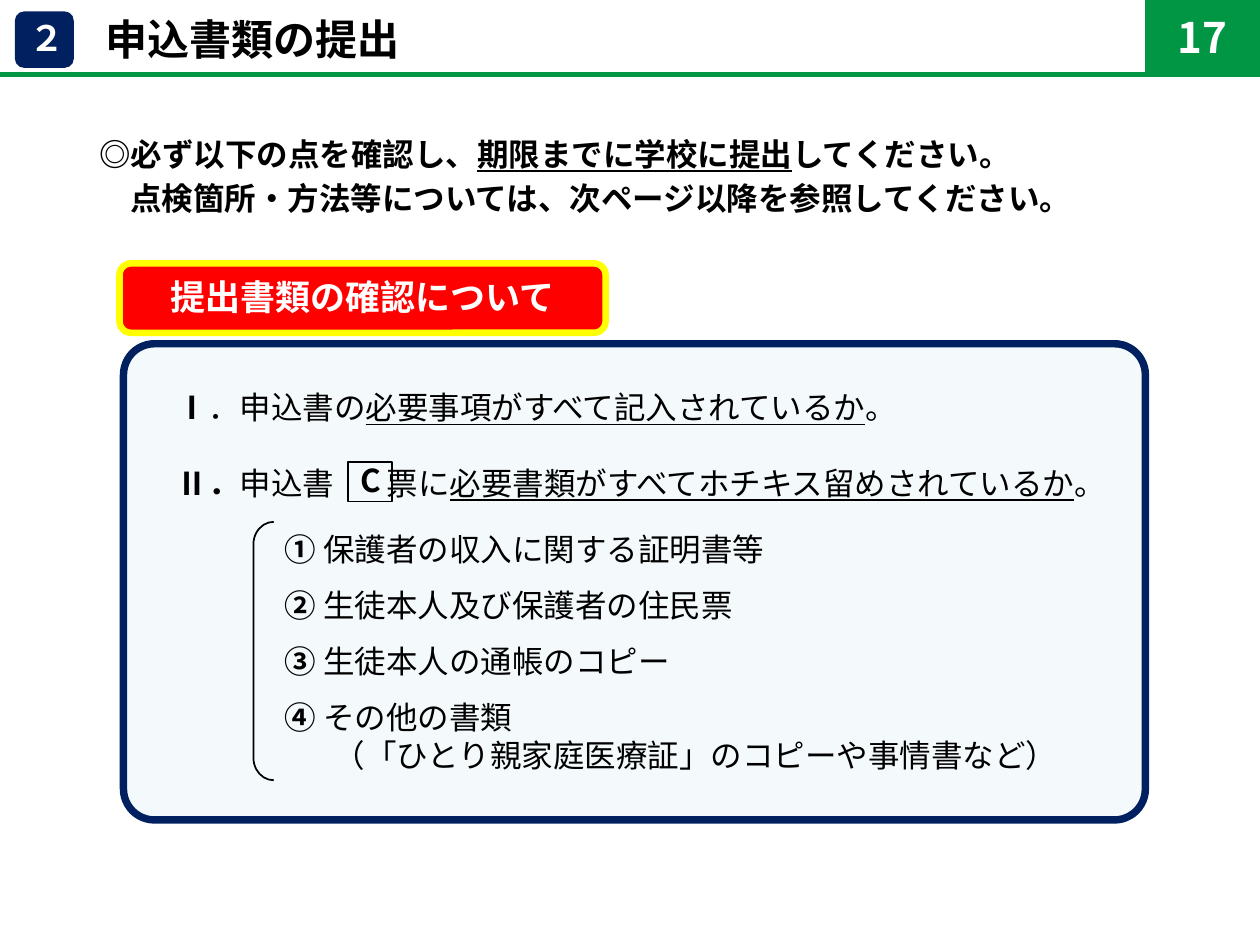
from dataclasses import dataclass
from typing import NamedTuple

from lxml.etree import SubElement
from pptx import Presentation
from pptx.dml.color import RGBColor
from pptx.enum.shapes import MSO_CONNECTOR, MSO_SHAPE
from pptx.enum.text import MSO_ANCHOR, PP_ALIGN
from pptx.oxml.ns import qn
from pptx.util import Cm, Pt


@dataclass(frozen=True)
class Theme:
    font: str = "Noto Sans CJK JP"
    black: str = "000000"
    white: str = "FFFFFF"
    navy: str = "002060"
    green: str = "009644"
    red: str = "FF0000"
    yellow: str = "FFFF00"
    pale: str = "DBEEF4"
    body: int = 18
    label: int = 20
    head: int = 24


class Box(NamedTuple):
    left: float
    top: float
    width: float
    height: float


class Span(NamedTuple):
    text: str
    bold: bool = False
    under: bool = False
    gap: int = 0


class Line(NamedTuple):
    spans: list[Span]
    indent: float
    before: float = 0


@dataclass(frozen=True)
class Block:
    kind: MSO_SHAPE
    box: Box
    fill: str = ""
    edge: str = ""
    weight: float = 1
    text: str = ""
    size: int = 18
    color: str = "FFFFFF"
    inset: float = 0.13
    foot: float = 0.13


THEME = Theme()


def style(run, size: int, color: str, bold: bool) -> None:
    font = run.font
    font.name, font.size, font.bold = THEME.font, Pt(size), bold
    font.color.rgb = RGBColor.from_string(color)
    SubElement(font._element, qn("a:ea")).set("typeface", THEME.font)


def set_frame(frame, top: float, foot: float, anchor: MSO_ANCHOR) -> None:
    frame.word_wrap = True
    frame.vertical_anchor = anchor
    frame.margin_left = frame.margin_right = Cm(0.25)
    frame.margin_top, frame.margin_bottom = Cm(top), Cm(foot)


def write_lines(frame, lines: list[Line]) -> None:
    for i, line in enumerate(lines):
        para = frame.add_paragraph() if i else frame.paragraphs[0]
        para.alignment = PP_ALIGN.LEFT
        para.space_before = Pt(line.before)
        props = para._p.get_or_add_pPr()
        props.set("marL", str(Cm(line.indent)))
        props.set("indent", "0")
        for span in line.spans:
            run = para.add_run()
            run.text = span.text
            style(run, THEME.body, THEME.black, span.bold)
            run.font.underline = span.under
            if span.gap:
                run.font._element.set("spc", str(span.gap * 100))


def draw_block(slide, block: Block):
    shape = slide.shapes.add_shape(block.kind, *map(Cm, block.box))
    shape.shadow.inherit = False
    if block.fill:
        shape.fill.solid()
        shape.fill.fore_color.rgb = RGBColor.from_string(block.fill)
    else:
        shape.fill.background()
    if block.edge:
        shape.line.color.rgb = RGBColor.from_string(block.edge)
        shape.line.width = Pt(block.weight)
    else:
        shape.line.fill.background()
    frame = shape.text_frame
    set_frame(frame, block.inset, block.foot, MSO_ANCHOR.MIDDLE)
    if block.text:
        para = frame.paragraphs[0]
        para.text = block.text
        para.alignment = PP_ALIGN.CENTER
        style(para.runs[0], block.size, block.color, True)
    return shape


def draw_title(slide, text: str, box: Box) -> None:
    title = slide.shapes.title
    title.left, title.top, title.width, title.height = map(Cm, box)
    frame = title.text_frame
    frame.text = text
    set_frame(frame, 0.2, 0.13, MSO_ANCHOR.MIDDLE)
    frame.paragraphs[0].alignment = PP_ALIGN.LEFT
    style(frame.paragraphs[0].runs[0], THEME.head, THEME.black, True)


def draw_rule(slide, top: float, width: float) -> None:
    rule = slide.shapes.add_connector(
        MSO_CONNECTOR.STRAIGHT, Cm(0), Cm(top), Cm(width), Cm(top))
    rule.line.color.rgb = RGBColor.from_string(THEME.green)
    rule.line.width = Pt(3)
    SubElement(rule._element.spPr, qn("a:effectLst"))


def draw_panel(slide, lines: list[Line]) -> None:
    panel = draw_block(slide, Block(
        MSO_SHAPE.ROUNDED_RECTANGLE, Box(2.49, 6.93, 20.6, 9.6),
        THEME.pale, THEME.navy, 4.25, inset=0.1))
    panel.adjustments[0] = 0.065
    tint = panel._element.spPr.find(qn("a:solidFill"))[0]
    SubElement(tint, qn("a:alpha")).set("val", "30000")
    write_lines(panel.text_frame, lines)


def main() -> None:
    deck = Presentation()
    deck.slide_width, deck.slide_height = Cm(25.4), Cm(19.05)
    slide = deck.slides.add_slide(deck.slide_layouts[5])
    draw_title(slide, "申込書類の提出", Box(1.88, 0.13, 11.02, 1.24))

    intro = slide.shapes.add_textbox(*map(Cm, Box(0.48, 2.59, 23.93, 2.31)))
    set_frame(intro.text_frame, 0.13, 0.13, MSO_ANCHOR.TOP)
    write_lines(intro.text_frame, [
        Line([Span("◎必ず以下の点を確認し、", True),
              Span("期限までに学校に提出", True, True),
              Span("してください。", True)], 1.27),
        Line([Span("点検箇所・方法等については、次ページ以降を参照してください。",
                   True)], 1.9, 3.6),
    ])

    papers = ["保護者の収入に関する証明書等", "生徒本人及び保護者の住民票",
              "生徒本人の通帳のコピー", "その他の書類"]
    items = [Line([Span(mark, True), Span(f" {name}")], 2.82,
                  10.5 if i else 16.3)
             for i, (mark, name) in enumerate(zip("①②③④", papers))]
    draw_panel(slide, [
        Line([Span("Ⅰ", True), Span("．申込書の"),
              Span("必要事項がすべて記入されているか", under=True),
              Span("。")], 0.64),
        Line([Span("Ⅱ．", True), Span("申込書"), Span("　", gap=12),
              Span("票に"),
              Span("必要書類がすべてホチキス留めされているか", under=True),
              Span("。")], 0.64, 21.5),
        *items,
        Line([Span("（「ひとり親家庭医療証」のコピーや事情書など）")], 3.81),
    ])

    draw_rule(slide, 1.5, 25.4)
    blocks = [
        Block(MSO_SHAPE.ROUNDED_RECTANGLE, Box(2.41, 5.31, 9.8, 1.4),
              THEME.red, THEME.yellow, 3.75, "提出書類の確認について",
              THEME.label, foot=0.2),
        Block(MSO_SHAPE.ROUNDED_RECTANGLE, Box(0.3, 0.23, 1.19, 1.14),
              THEME.navy, text="２", size=THEME.label, inset=0.05),
        Block(MSO_SHAPE.RECTANGLE, Box(7.01, 9.32, 0.89, 0.79),
              edge=THEME.black, text="C", size=THEME.body,
              color=THEME.black, inset=0.05),
        Block(MSO_SHAPE.RECTANGLE, Box(23.14, 0, 2.21, 1.5),
              THEME.green, THEME.green, 3, "17", THEME.head),
    ]
    for block in blocks:
        draw_block(slide, block)
    brace = draw_block(slide, Block(
        MSO_SHAPE.LEFT_BRACKET, Box(5.11, 10.52, 0.41, 5.21),
        edge=THEME.black))
    brace.adjustments[0] = 1.1
    deck.save("out.pptx")


if __name__ == "__main__":
    main()
